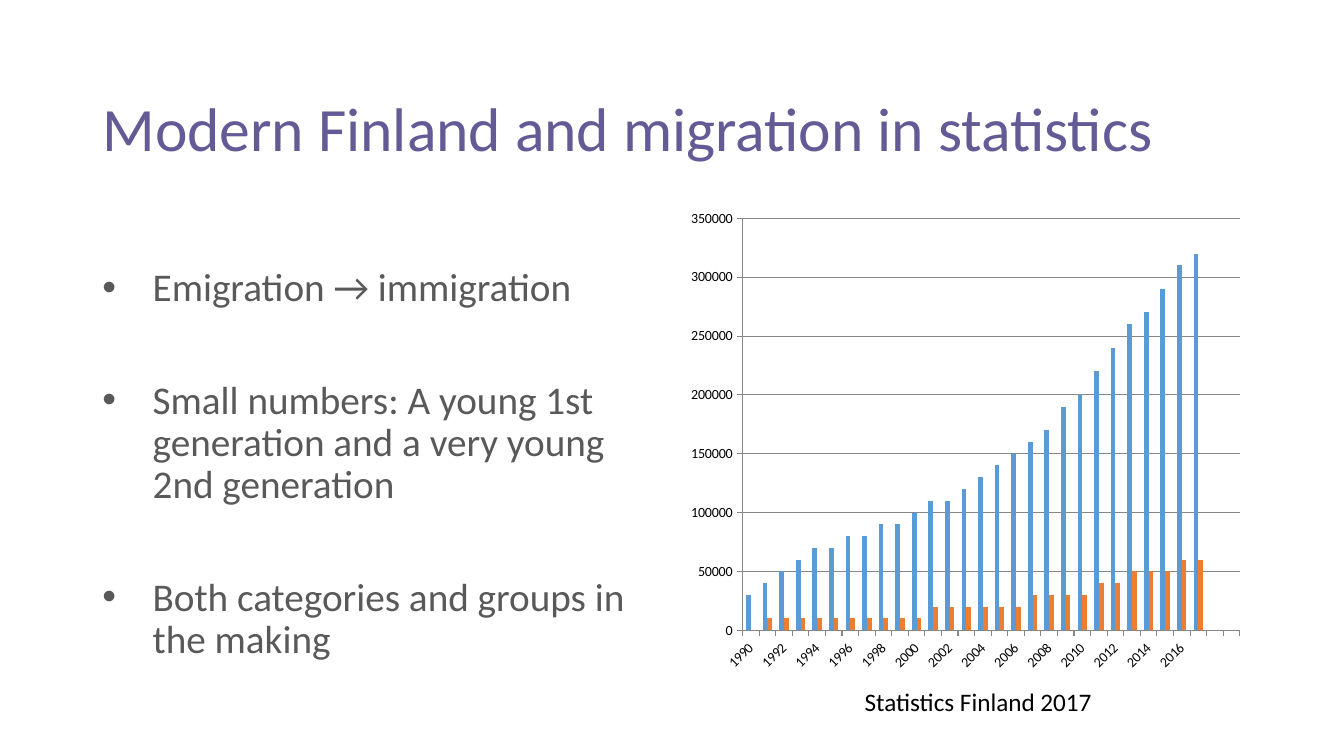
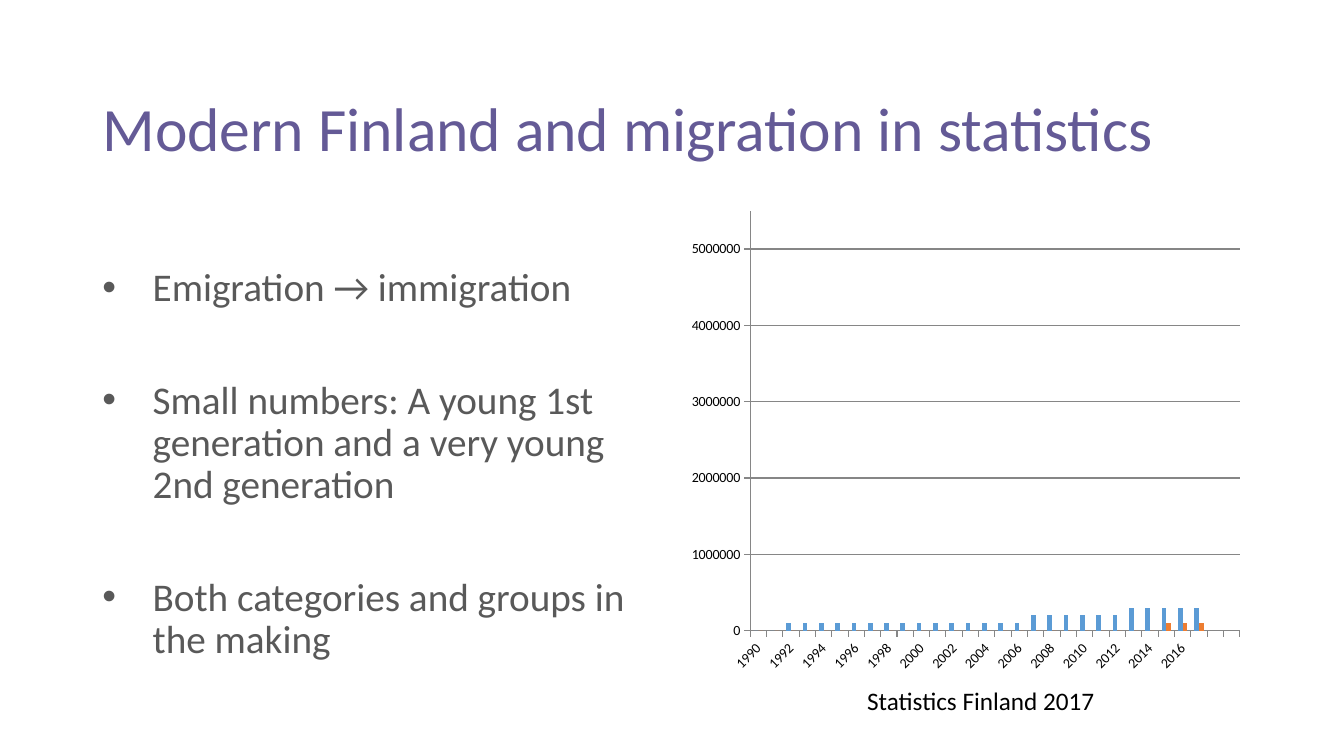
from pptx import Presentation
from pptx.chart.data import CategoryChartData
from pptx.dml.color import RGBColor
from pptx.enum.chart import XL_CHART_TYPE as ChartType, XL_TICK_MARK as Tick
from pptx.enum.text import MSO_ANCHOR as Anchor, MSO_AUTO_SIZE as AutoSize, PP_ALIGN as Align
from pptx.oxml import parse_xml
from pptx.oxml.ns import nsdecls, qn
from pptx.util import Inches, Pt

COLORS = {"title": "645A96", "body": "595959", "text": "000000", "grid": "868686",
          "first": "5B9BD5", "second": "ED7D31"}
COLUMNS = 160  # square grid cells across the 16:9 slide

TITLE = "Modern Finland and migration in statistics"
POINTS = ["Emigration → immigration",
          "Small numbers: A young 1st generation and a very young 2nd generation",
          "Both categories and groups in the making"]
SOURCE = "Statistics Finland 2017"

YEARS = [str(year) for year in range(1990, 2018)] + ["", ""]
THOUSANDS = {
    "first": [33, 44, 52, 61, 66, 72, 76, 82, 89, 94, 99, 108, 113, 119, 126, 135, 146,
              159, 174, 188, 203, 220, 239, 256, 273, 287, 307, 322],
    "second": [4, 6, 6, 6, 7, 8, 9, 10, 11, 13, 14, 16, 17, 18, 20, 22, 24,
               27, 29, 32, 34, 38, 41, 46, 49, 53, 58, 62],
}

# Boxes are left, top, width, height in grid cells
CHART_BOX = (81, 24, 68, 57)
VIEWS = [
    {"axis": {"minimum_scale": 0, "maximum_scale": 350000, "major_unit": 50000},
     "round_to": 10000,
     "plot": (88.4, 26, 59.2, 49.05),
     "caption": (91.3, 81.1, 50.3, 4.8)},
    {"axis": {"minimum_scale": 0, "maximum_scale": 5500000, "major_unit": 1000000},
     "round_to": 100000,
     "plot": (89.3, 25.1, 58.3, 50),
     "caption": (99.9, 81, 33.7, 4.8)},
]


def apply(obj, values):
    for name, value in values.items():
        setattr(obj, name, value)


class Deck:
    font = "Calibri"

    def __init__(self):
        self.prs = Presentation()
        apply(self.prs, {"slide_width": Inches(40 / 3), "slide_height": Inches(7.5)})
        self.cell = self.prs.slide_width / COLUMNS
        self.s = None

    def box(self, *cells):
        return [round(n * self.cell) for n in cells]

    def style(self, font, size, color):
        apply(font, {"name": self.font, "size": Pt(size)})
        font.color.rgb = RGBColor.from_string(COLORS[color])

    def slide(self, title):
        self.s = self.prs.slides.add_slide(self.prs.slide_layouts[5])
        sp = self.s.shapes.title
        apply(sp, dict(zip(("left", "top", "width", "height"), self.box(11, 10.1, 138, 11.1))))
        tf = sp.text_frame
        apply(tf, {"text": title, "vertical_anchor": Anchor.MIDDLE, "word_wrap": True})
        p = tf.paragraphs[0]
        apply(p, {"alignment": Align.LEFT, "line_spacing": 0.9})
        self.style(p.runs[0].font, 44, "title")

    def text_frame(self, cells):
        tf = self.s.shapes.add_textbox(*self.box(*cells)).text_frame
        tf.word_wrap = True
        return tf

    def bullets(self, items, cells):
        tf = self.text_frame(cells)
        for i, item in enumerate(items):
            p = tf.add_paragraph() if i else tf.paragraphs[0]
            p.line_spacing = 0.9
            if i:
                p.space_before = Pt(50)
            pPr = p._p.get_or_add_pPr()
            pPr.set("marL", str(Inches(0.5)))
            pPr.set("indent", str(-Inches(0.5)))
            pPr.append(parse_xml(f'<a:buFont {nsdecls("a")} typeface="Arial"/>'))
            pPr.append(parse_xml(f'<a:buChar {nsdecls("a")} char="•"/>'))
            r = p.add_run()
            r.text = item
            self.style(r.font, 28, "body")

    def caption(self, text, cells):
        tf = self.text_frame(cells)
        tf.auto_size = AutoSize.SHAPE_TO_FIT_TEXT
        p = tf.paragraphs[0]
        p.alignment = Align.CENTER
        r = p.add_run()
        r.text = text
        self.style(r.font, 18, "text")

    def columns(self, cells, scale, round_to, plot_cells):
        data = CategoryChartData()
        data.categories = YEARS
        for i, values in enumerate(THOUSANDS.values(), 1):
            rounded = [round(v * 1000 / round_to) * round_to for v in values]
            data.add_series(f"Series {i}", rounded + [None, None])
        chart = self.s.shapes.add_chart(
            ChartType.COLUMN_CLUSTERED, *self.box(*cells), data).chart
        apply(chart, {"has_legend": False, "has_title": False})
        self.style(chart.font, 10, "text")
        plot = chart.plots[0]
        apply(plot, {"gap_width": 150, "overlap": 0, "vary_by_categories": False})
        for series, color in zip(plot.series, THOUSANDS):
            series.format.fill.solid()
            series.format.fill.fore_color.rgb = RGBColor.from_string(COLORS[color])

        years, counts = chart.category_axis, chart.value_axis
        apply(counts, {**scale, "has_major_gridlines": True})
        for axis in (years, counts):
            apply(axis, {"major_tick_mark": Tick.OUTSIDE, "minor_tick_mark": Tick.NONE})
            self.style(axis.tick_labels.font, 10, "text")
        for lines in (years, counts, counts.major_gridlines):
            lines.format.line.width = Pt(0.75)
            lines.format.line.color.rgb = RGBColor.from_string(COLORS["grid"])
        years._element.txPr.find(qn("a:bodyPr")).set("rot", str(-45 * 60000))
        self.place_plot(chart, cells, plot_cells)

    def place_plot(self, chart, cells, plot_cells):
        """Fix the inner plot area, turning grid cells into shares of the chart."""
        left, top, width, height = cells
        x, y, w, h = plot_cells
        shares = {"x": (x - left) / width, "y": (y - top) / height,
                  "w": w / width, "h": h / height}
        area = chart._chartSpace.chart.plotArea
        for old in area.findall(qn("c:layout")):
            area.remove(old)
        modes = "".join(f'<c:{k}Mode val="edge"/>' for k in "xy")
        sizes = "".join(f'<c:{k} val="{v}"/>' for k, v in shares.items())
        area.insert(0, parse_xml(
            f'<c:layout {nsdecls("c")}><c:manualLayout><c:layoutTarget val="inner"/>'
            f'{modes}{sizes}</c:manualLayout></c:layout>'))


def main():
    deck = Deck()
    for view in VIEWS:
        deck.slide(TITLE)
        deck.bullets(POINTS, (11, 31.3, 68, 49.7))
        deck.columns(CHART_BOX, view["axis"], view["round_to"], view["plot"])
        deck.caption(SOURCE, view["caption"])
    deck.prs.save("out.pptx")


if __name__ == "__main__":
    main()
